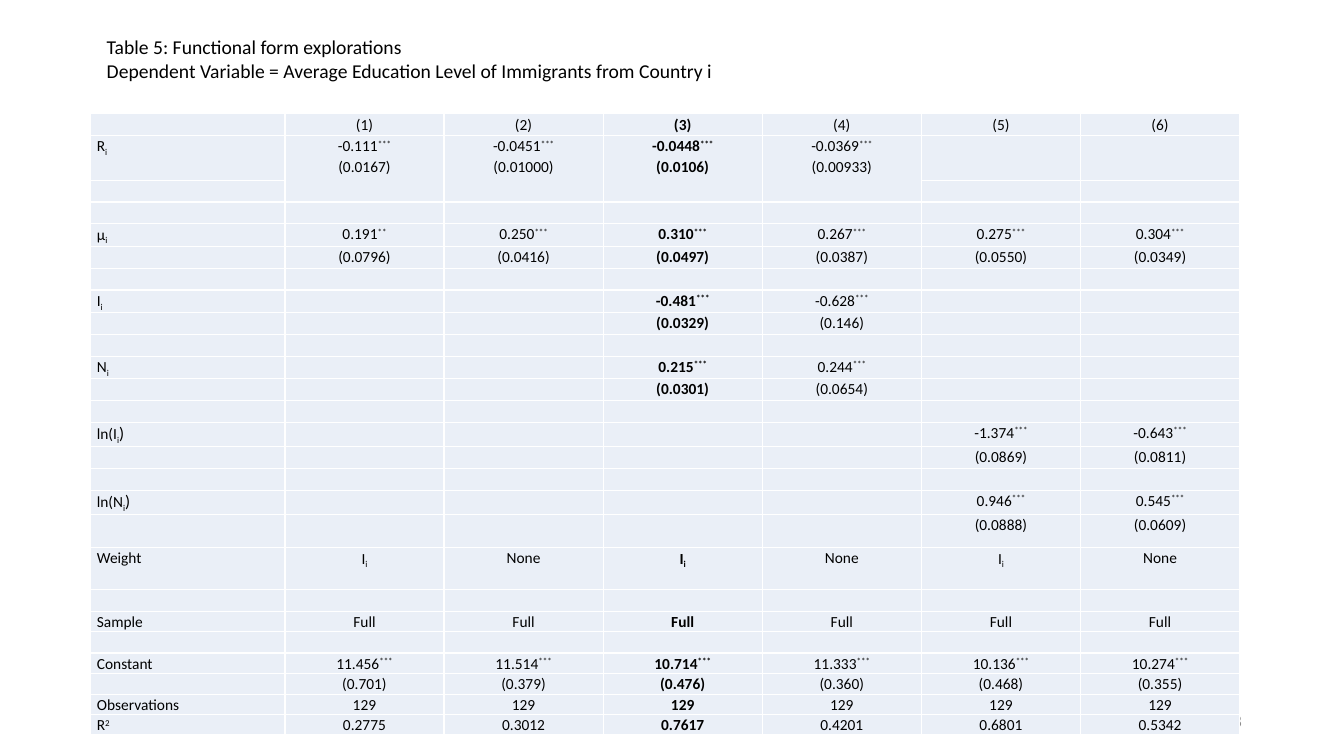
import pptx
import pptx.dml.color
import pptx.enum.text
import pptx.oxml
import pptx.oxml.ns
import pptx.util
from lxml import etree

Cm, Pt = pptx.util.Cm, pptx.util.Pt
ALIGN, ANCHOR = pptx.enum.text.PP_ALIGN, pptx.enum.text.MSO_ANCHOR

TITLE = ["Table 5: Functional form explorations",
         "Dependent Variable = Average Education Level of Immigrants from Country i"]
PAGE = ["18"]
BLANK = ("",) * 7
ROWS = [
    ("", "(1)", "(2)", "(3)", "(4)", "(5)", "(6)"),
    ("R|_i", "-0.111|^***\n(0.0167)", "-0.0451|^***\n(0.01000)",
     "-0.0448|^***\n(0.0106)", "-0.0369|^***\n(0.00933)", "", ""),
    BLANK,
    BLANK,
    ("μ|_i", "0.191|^**", "0.250|^***", "0.310|^***", "0.267|^***", "0.275|^***", "0.304|^***"),
    ("", "(0.0796)", "(0.0416)", "(0.0497)", "(0.0387)", "(0.0550)", "(0.0349)"),
    BLANK,
    ("I|_i", "", "", "-0.481|^***", "-0.628|^***", "", ""),
    ("", "", "", "(0.0329)", "(0.146)", "", ""),
    BLANK,
    ("N|_i", "", "", "0.215|^***", "0.244|^***", "", ""),
    ("", "", "", "(0.0301)", "(0.0654)", "", ""),
    BLANK,
    ("ln(I|_i|)", "", "", "", "", "-1.374|^***", "-0.643|^***"),
    ("", "", "", "", "", "(0.0869)", "(0.0811)"),
    BLANK,
    ("ln(N|_i|)", "", "", "", "", "0.946|^***", "0.545|^***"),
    ("", "", "", "", "", "(0.0888)", "(0.0609)"),
    ("Weight", "I|_i", "None", "I|_i", "None", "I|_i", "None"),
    BLANK,
    ("Sample",) + ("Full",) * 6,
    BLANK,
    ("Constant", "11.456|^***", "11.514|^***", "10.714|^***", "11.333|^***", "10.136|^***",
     "10.274|^***"),
    ("", "(0.701)", "(0.379)", "(0.476)", "(0.360)", "(0.468)", "(0.355)"),
    ("Observations",) + ("129",) * 6,
    ("R|^2", "0.2775", "0.3012", "0.7617", "0.4201", "0.6801", "0.5342"),
]
ROW_HEIGHT = 0.55
SPECIAL_HEIGHTS = {1: 1.12, 13: 0.61, 16: 0.61, 17: 0.84, 18: 1.05, 20: 0.48,
                   22: 0.52, 23: 0.52, 24: 0.52, 25: 0.5}
LABEL_WIDTH, MODEL_WIDTH = 4.89, 4.01
PREFERRED_MODEL = 3
MERGED_MODELS = range(1, 5)
BASELINES = {"_": "-25000", "^": "30000"}
COLORS = {"text": "000000", "page": "8C8C8C", "cell": "EAEFF7", "border": "FFFFFF"}


def rgb(name):
    return pptx.dml.color.RGBColor.from_string(COLORS[name])


def style(p, size, color, align):
    p.alignment = align
    p.font.size = Pt(size)
    p.font.name = "Calibri"
    p.font.color.rgb = rgb(color)


def add_text(slide, box, lines, size, color, align, anchor):
    tf = slide.shapes.add_textbox(*map(Cm, box)).text_frame
    tf.word_wrap = True
    tf.vertical_anchor = anchor
    for i, line in enumerate(lines):
        p = tf.paragraphs[0] if i == 0 else tf.add_paragraph()
        p.add_run().text = line
        style(p, size, color, align)


def add_borders(cell):
    tcPr = cell._tc.get_or_add_tcPr()
    for side in ("a:lnL", "a:lnR", "a:lnT", "a:lnB"):
        ln = etree.SubElement(tcPr, pptx.oxml.ns.qn(side), w=str(Pt(1)))
        fill = etree.SubElement(ln, pptx.oxml.ns.qn("a:solidFill"))
        etree.SubElement(fill, pptx.oxml.ns.qn("a:srgbClr"), val=COLORS["border"])


def fill_cell(cell, text, column):
    add_borders(cell)
    cell.fill.solid()
    cell.fill.fore_color.rgb = rgb("cell")
    cell.margin_left = cell.margin_right = Cm(0.15)
    cell.margin_top = cell.margin_bottom = 0
    tf = cell.text_frame
    for i, line in enumerate(text.split("\n")):
        p = tf.paragraphs[0] if i == 0 else tf.add_paragraph()
        style(p, 11, "text", ALIGN.CENTER if column else ALIGN.LEFT)
        p.line_spacing = 1.07
        p.font.bold = column == PREFERRED_MODEL
        if not line:
            etree.SubElement(p._p, pptx.oxml.ns.qn("a:endParaRPr"), sz="1100")
            continue
        for part in line.split("|"):
            r = p.add_run()
            r.text = part.lstrip("_^")
            if part[0] in BASELINES:
                r._r.get_or_add_rPr().set("baseline", BASELINES[part[0]])
            elif part == ")":
                r.font.size = Pt(12)


def add_results(slide):
    heights = [SPECIAL_HEIGHTS.get(i, ROW_HEIGHT) for i in range(len(ROWS))]
    widths = [LABEL_WIDTH] + [MODEL_WIDTH] * 6
    table = slide.shapes.add_table(len(ROWS), len(widths), Cm(2.29), Cm(2.87),
                                   Cm(sum(widths)), Cm(sum(heights))).table
    table.first_row = table.horz_banding = False
    for column, width in zip(table.columns, widths):
        column.width = Cm(width)
    for i, (values, height) in enumerate(zip(ROWS, heights)):
        table.rows[i].height = Cm(height)
        for j, value in enumerate(values):
            fill_cell(table.cell(i, j), value, j)
    for j in MERGED_MODELS:
        table.cell(1, j).merge(table.cell(2, j))


def main():
    """Build the regression table slide and save it."""
    prs = pptx.Presentation()
    prs.slide_width, prs.slide_height = Cm(33.87), Cm(19.05)
    s = prs.slides.add_slide(prs.slide_layouts[6])
    add_text(s, (23.93, 17.65, 7.62, 1.02), PAGE, 12, "page", ALIGN.RIGHT, ANCHOR.MIDDLE)
    add_text(s, (2.44, 0.76, 15.8, 1.45), TITLE, 14, "text", ALIGN.LEFT, ANCHOR.TOP)
    add_results(s)
    prs.save("out.pptx")


if __name__ == "__main__":
    main()
